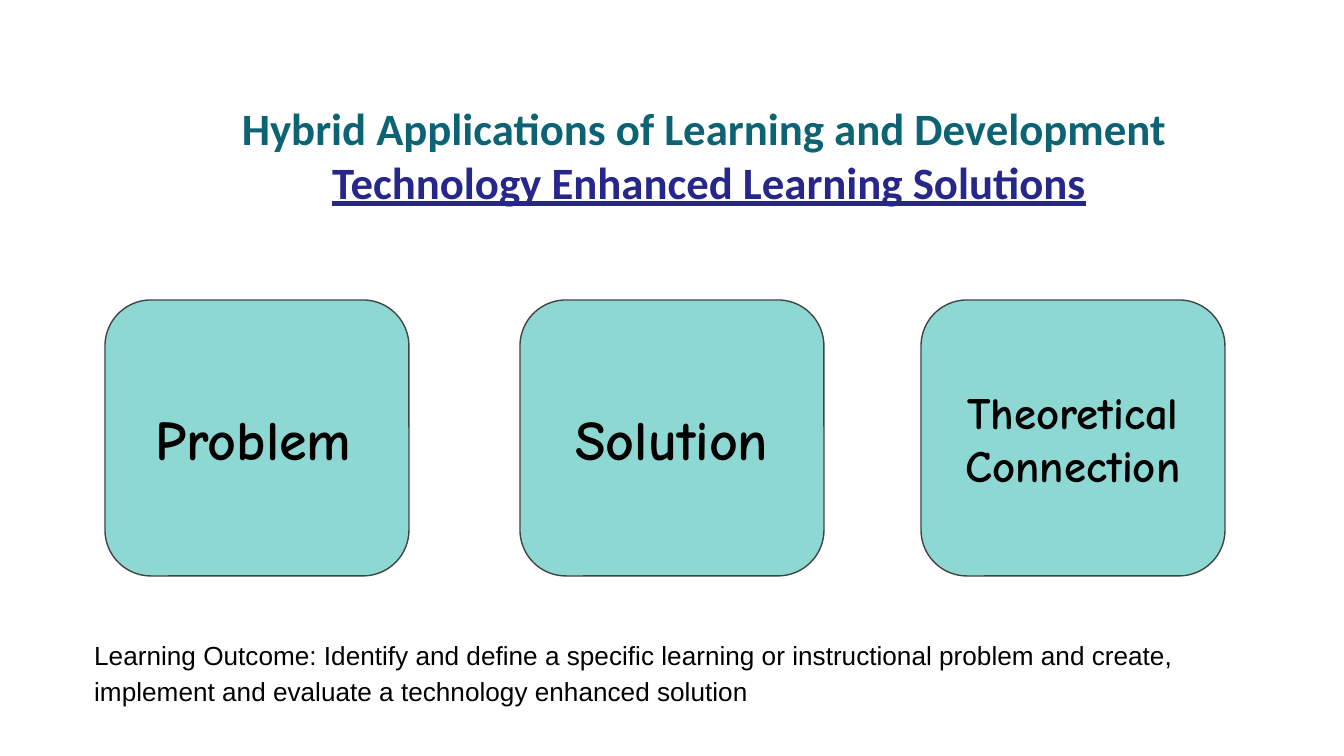
from pptx import Presentation
from pptx import util as u
from pptx.dml.color import RGBColor
from pptx.enum import shapes, text

COLORS = {"teal": "0B6374", "indigo": "27278B", "card": "8DD8D3",
          "edge": "424242", "black": "000000"}
TITLE = [("Hybrid Applications of Learning and Development ", "teal", False),
         ("Technology Enhanced Learning Solutions", "indigo", True)]
CARDS = [("Problem", 30, 105), ("Solution", 30, 520),
         ("Theoretical Connection", 24, 921)]
OUTCOME = ("Learning Outcome: Identify and define a specific learning or "
           "instructional problem and create, implement and evaluate a "
           "technology enhanced solution")
TITLE_BOX = (192, 87, 1034, 146)
OUTCOME_BOX = (81, 621, 1144, 118)
CARD_TOP, CARD_W, CARD_H = 300, 304, 276
SLIDE_W, SLIDE_H = 1344, 756
SCALE = 9144000 / SLIDE_W


def px(n):
    return u.Emu(round(n * SCALE))


def color(name):
    return RGBColor.from_string(COLORS[name])


def set_frame(tf, anchor):
    tf.word_wrap = True
    tf.auto_size = text.MSO_AUTO_SIZE.NONE
    tf.vertical_anchor = anchor
    tf.margin_left = tf.margin_right = u.Inches(0.1)
    tf.margin_top = tf.margin_bottom = u.Inches(0.1)


def set_font(p, name, size, fill, bold=False):
    p.font.name = name
    p.font.size = u.Pt(size)
    p.font.bold = bold
    p.font.color.rgb = color(fill)


def add_title(slide):
    sp = slide.shapes.title
    sp.left, sp.top, sp.width, sp.height = map(px, TITLE_BOX)
    tf = sp.text_frame
    set_frame(tf, text.MSO_ANCHOR.TOP)
    tf.text = "\n".join(line for line, _, _ in TITLE)
    for p, (_, fill, underline) in zip(tf.paragraphs, TITLE):
        p.alignment = text.PP_ALIGN.CENTER
        set_font(p, "Calibri", 24, fill, True)
        p.font.underline = underline


def add_card(slide, label, size, left):
    sp = slide.shapes.add_shape(shapes.MSO_SHAPE.ROUNDED_RECTANGLE,
                                *map(px, (left, CARD_TOP, CARD_W, CARD_H)))
    sp.shadow.inherit = False
    sp.fill.solid()
    sp.fill.fore_color.rgb = color("card")
    sp.line.color.rgb = color("edge")
    sp.line.width = u.Pt(0.75)
    tf = sp.text_frame
    set_frame(tf, text.MSO_ANCHOR.MIDDLE)
    tf.text = label
    p = tf.paragraphs[0]
    p.alignment = text.PP_ALIGN.CENTER
    set_font(p, "Comic Neue", size, "black", True)
    return p


def add_outcome(slide):
    tf = slide.shapes.add_textbox(*map(px, OUTCOME_BOX)).text_frame
    set_frame(tf, text.MSO_ANCHOR.TOP)
    tf.text = OUTCOME
    p = tf.paragraphs[0]
    p.line_spacing = 1.15
    set_font(p, "Arial", 14, "black")


def main():
    prs = Presentation()
    prs.slide_width, prs.slide_height = px(SLIDE_W), px(SLIDE_H)
    slide = prs.slides.add_slide(prs.slide_layouts[5])
    add_title(slide)
    for card in CARDS:
        p = add_card(slide, *card)
        if card is CARDS[0]:
            r = p.add_run()
            r.text = " "
            r.font.name = "Arial"
            r.font.size = u.Pt(14)
            r.font.bold = False
    add_outcome(slide)
    prs.save("out.pptx")


if __name__ == "__main__":
    main()
